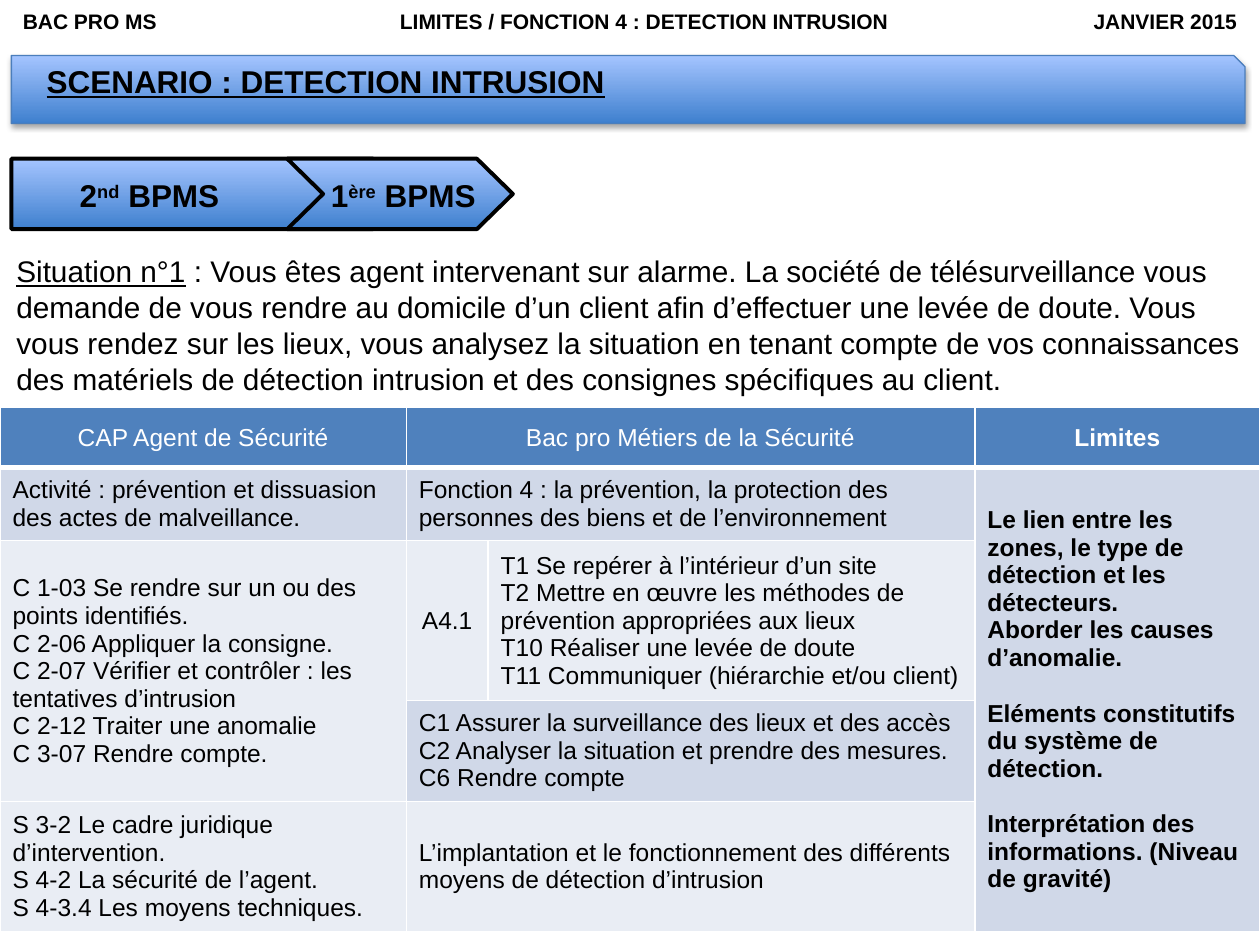
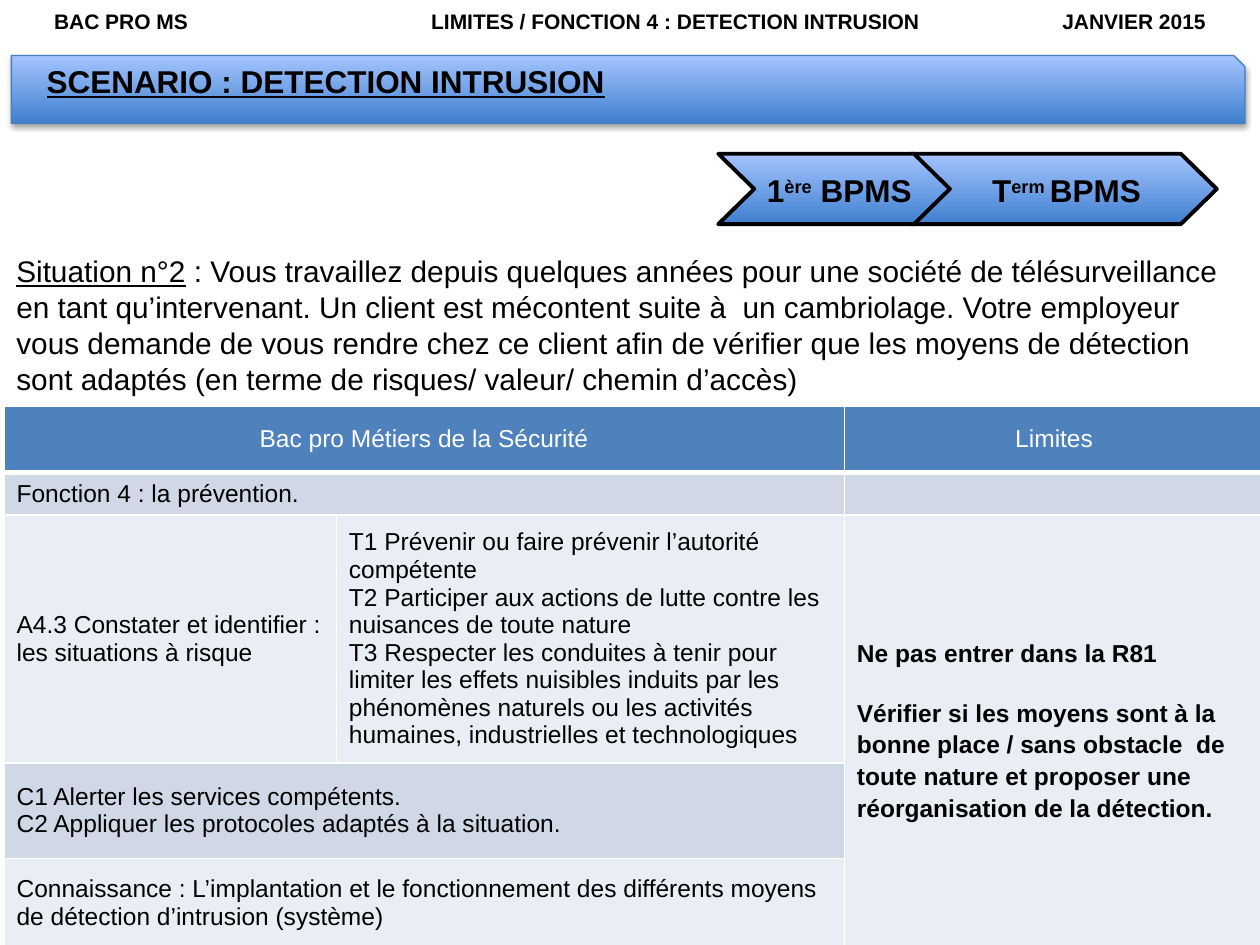
"""Build the two intrusion detection scenario slides."""
from lxml.etree import SubElement
from pptx import Presentation
from pptx.dml.color import RGBColor as RGB
from pptx.enum.shapes import MSO_SHAPE as SHAPE
from pptx.enum.text import MSO_ANCHOR as ANCHOR, PP_ALIGN as ALIGN
from pptx.oxml import parse_xml
from pptx.oxml.ns import nsdecls, qn
from pptx.util import Cm, Pt

COLORS = {
    "text": "000000", "white": "FFFFFF", "accent": "4F81BD", "odd": "D0D8E8",
    "even": "E9EDF4", "deep": "3F80CE", "light": "A4C4FF", "edge": "4B7EBC",
}
HEADER_FMT = {"size": Pt(12), "bold": True}
TITLE_FMT = {"size": Pt(18), "bold": True, "underline": True}
STEP_FMT = {"size": Pt(18), "bold": True}
BODY_FMT = {"size": Pt(17)}
CELL_FMT = {"size": Pt(14), "bold": False}

HEADER = ("BAC PRO MS", "LIMITES / FONCTION 4 : DETECTION INTRUSION", "JANVIER 2015")
TITLE = "SCENARIO : DETECTION INTRUSION"
CHEVRON_ADJ = 0.511

SLIDES = [
    {
        "header_margin": 0.46,
        "steps_top": 3.2,
        "steps": [
            (SHAPE.PENTAGON, 0.23, 8.0, 1.3, 3.43, ("2", "nd", " BPMS")),
            (SHAPE.CHEVRON, 5.79, 4.55, 6.3, 3.66, ("1", "ère", " BPMS")),
        ],
        "situation": (
            "Situation n°1",
            " : Vous êtes agent intervenant sur alarme. La société de télésurveillance vous "
            "demande de vous rendre au domicile d’un client afin d’effectuer une levée de doute. "
            "Vous vous rendez sur les lieux, vous analysez la situation en tenant compte de vos "
            "connaissances des matériels de détection intrusion et des consignes spécifiques au "
            "client."),
        "table": {
            "at": (0, 8.21),
            "cols": (8.19, 1.65, 9.81, 5.75),
            "rows": (1.22, 1.47, 3.2, 2.03, 2.62),
            "merges": [(0, 1, 0, 2), (1, 1, 1, 2), (1, 3, 4, 3), (2, 0, 3, 0),
                       (3, 1, 3, 2), (4, 1, 4, 2)],
            "bold": [(0, 3), (1, 3)],
            "centred": [(2, 1)],
            "block_spacing": 1.0,
            "cells": {
                (0, 0): "CAP Agent de Sécurité",
                (0, 1): "Bac pro Métiers de la Sécurité",
                (0, 3): "Limites",
                (1, 0): "Activité : prévention et dissuasion des actes de malveillance.",
                (1, 1): "Fonction 4 : la prévention, la protection des personnes des biens "
                        "et de l’environnement",
                (1, 3): "Le lien entre les zones, le type de détection et les détecteurs.\n"
                        "Aborder les causes d’anomalie.\n\n"
                        "Eléments constitutifs du système de détection.\n\n"
                        "Interprétation des informations. (Niveau de gravité)",
                (2, 0): "C 1-03 Se rendre sur un ou des points identifiés.\n"
                        "C 2-06 Appliquer la consigne.\n"
                        "C 2-07 Vérifier et contrôler : les tentatives d’intrusion\n"
                        "C 2-12 Traiter une anomalie\n"
                        "C 3-07 Rendre compte.",
                (2, 1): "A4.1",
                (2, 2): "T1 Se repérer à l’intérieur d’un site\n"
                        "T2 Mettre en œuvre les méthodes de prévention appropriées aux lieux\n"
                        "T10 Réaliser une levée de doute\n"
                        "T11 Communiquer (hiérarchie et/ou client)",
                (3, 1): "C1 Assurer la surveillance des lieux et des accès\n"
                        "C2 Analyser la situation et prendre des mesures.\n"
                        "C6 Rendre compte",
                (4, 0): "S 3-2 Le cadre juridique d’intervention.\n"
                        "S 4-2 La sécurité de l’agent.\n"
                        "S 4-3.4 Les moyens techniques.",
                (4, 1): "L’implantation et le fonctionnement des différents moyens de "
                        "détection d’intrusion",
            },
        },
    },
    {
        "header_margin": 1.09,
        "steps_top": 3.1,
        "steps": [
            (SHAPE.CHEVRON, 18.36, 6.17, 18.82, 5.36, ("T", "erm ", "BPMS")),
            (SHAPE.CHEVRON, 14.48, 4.67, 15.09, 3.66, ("1", "ère", " BPMS")),
        ],
        "situation": (
            "Situation n°2",
            " : Vous travaillez depuis quelques années pour une société de télésurveillance en "
            "tant qu’intervenant. Un client est mécontent suite à  un cambriolage. Votre employeur "
            "vous demande de vous rendre chez ce client afin de vérifier que les moyens de "
            "détection sont adaptés (en terme de risques/ valeur/ chemin d’accès)"),
        "table": {
            "at": (0.08, 8.18),
            "cols": (6.7, 10.24, 8.46),
            "rows": (1.35, 0.84, 5.0, 1.93, 1.8),
            "merges": [(0, 0, 0, 1), (1, 0, 1, 1), (2, 2, 4, 2), (3, 0, 3, 1), (4, 0, 4, 1)],
            "bold": [(2, 2)],
            "centred": [],
            "block_spacing": 1.15,
            "cells": {
                (0, 0): "Bac pro Métiers de la Sécurité",
                (0, 2): "Limites",
                (1, 0): "Fonction 4 : la prévention.",
                (2, 0): "A4.3 Constater et identifier : les situations à risque",
                (2, 1): "T1 Prévenir ou faire prévenir l’autorité compétente\n"
                        "T2 Participer aux actions de lutte contre les nuisances de toute nature\n"
                        "T3 Respecter les conduites à tenir pour limiter les effets nuisibles "
                        "induits par les phénomènes naturels ou les activités humaines, "
                        "industrielles et technologiques",
                (2, 2): "Ne pas entrer dans la R81\n\n"
                        "Vérifier si les moyens sont à la bonne place / sans obstacle  de toute "
                        "nature et proposer une réorganisation de la détection.",
                (3, 0): "C1 Alerter les services compétents.\n"
                        "C2 Appliquer les protocoles adaptés à la situation.",
                (4, 0): "Connaissance : L’implantation et le fonctionnement des différents "
                        "moyens de détection d’intrusion (système)",
            },
        },
    },
]


def rgb(name):
    return RGB.from_string(COLORS[name])


def add_run(p, text, fmt, color="text"):
    r = p.add_run()
    r.text = text
    for key, value in {"name": "Arial", **fmt}.items():
        setattr(r.font, key, value)
    r.font.color.rgb = rgb(color)
    return r


def add_text(s, left, top, width, height):
    tf = s.shapes.add_textbox(Cm(left), Cm(top), Cm(width), Cm(height)).text_frame
    tf.word_wrap = True
    return tf


def add_gradient_shape(s, kind, left, top, width, height, line, weight):
    sp = s.shapes.add_shape(kind, Cm(left), Cm(top), Cm(width), Cm(height))
    sp.shadow.inherit = False
    sp.fill.gradient()
    sp.fill.gradient_angle = 90
    for stop, name in zip(sp.fill.gradient_stops, ("deep", "light")):
        stop.color.rgb = rgb(name)
    sp.line.color.rgb = rgb(line)
    sp.line.width = Pt(weight)
    return sp


def add_header(s, margin):
    tf = add_text(s, 0, 0.05, 25.4, 0.76)
    tf.margin_left, tf.margin_right = Cm(margin), 0
    p = tf.paragraphs[0]
    tabs = SubElement(p._p.get_or_add_pPr(), qn("a:tabLst"))
    for pos, align in ((12.53, "ctr"), (25.4 - 2 * margin, "r")):
        SubElement(tabs, qn("a:tab"), pos=str(Cm(pos)), algn=align)
    add_run(p, "\t".join(HEADER), HEADER_FMT)


def add_title(s):
    sp = add_gradient_shape(s, SHAPE.SNIP_1_RECTANGLE, 0.23, 1.12, 24.87, 1.37, "edge", 0.75)
    sp._element.spPr.find(qn("a:effectLst")).append(parse_xml(
        f'<a:outerShdw {nsdecls("a")} blurRad="40000" dist="23000" dir="5400000" rotWithShape="0">'
        f'<a:srgbClr val="{COLORS["text"]}"><a:alpha val="35000"/></a:srgbClr></a:outerShdw>'))
    add_run(add_text(s, 0.69, 1.12, 19.4, 1.02).paragraphs[0], TITLE, TITLE_FMT)


def add_steps(s, top, steps):
    for kind, left, width, *_ in steps:
        sp = add_gradient_shape(s, kind, left, top, width, 1.42, "text", 2.25)
        if kind == SHAPE.CHEVRON:
            sp.adjustments[0] = CHEVRON_ADJ
    for *_, left, width, (start, raised, end) in steps:
        p = add_text(s, left, top + 0.23, width, 1.02).paragraphs[0]
        p.alignment = ALIGN.CENTER
        add_run(p, start, STEP_FMT)
        add_run(p, raised, STEP_FMT)._r.get_or_add_rPr().set("baseline", "30000")
        add_run(p, end, STEP_FMT)


def add_situation(s, label, story):
    p = add_text(s, 0.08, 4.98, 25.4, 3.18).paragraphs[0]
    add_run(p, label, {**BODY_FMT, "underline": True})
    add_run(p, story, BODY_FMT)


def style_cell(cell, row):
    tcPr = cell._tc.get_or_add_tcPr()
    for side in "LRTB":
        thick = (row == 0 and side == "B") or (row == 1 and side == "T")
        ln = SubElement(tcPr, qn(f"a:ln{side}"), w=str(Pt(3 if thick else 1)))
        SubElement(SubElement(ln, qn("a:solidFill")), qn("a:srgbClr"), val=COLORS["white"])
    cell.fill.solid()
    cell.fill.fore_color.rgb = rgb("accent" if row == 0 else "odd" if row % 2 else "even")
    cell.vertical_anchor = ANCHOR.MIDDLE


def fill_cell(cell, text, fmt, color, align, block_spacing):
    p = None
    for b, block in enumerate(text.split("\n\n")):
        for n, line in enumerate(block.split("\n")):
            p = cell.text_frame.add_paragraph() if p else cell.text_frame.paragraphs[0]
            p.alignment = align
            if b:
                p.line_spacing = block_spacing
                p.space_before = Pt(0 if n else 16)
            add_run(p, line, fmt, color)


def add_grid(s, at, cols, rows, merges, bold, centred, block_spacing, cells):
    left, top = at
    table = s.shapes.add_table(len(rows), len(cols), Cm(left), Cm(top),
                               Cm(sum(cols)), Cm(sum(rows))).table
    for col, width in zip(table.columns, cols):
        col.width = Cm(width)
    for row, height in zip(table.rows, rows):
        row.height = Cm(height)
    for r1, c1, r2, c2 in merges:
        table.cell(r1, c1).merge(table.cell(r2, c2))
    for r in range(len(rows)):
        for c in range(len(cols)):
            cell = table.cell(r, c)
            style_cell(cell, r)
            if (r, c) in cells:
                fill_cell(cell, cells[r, c], {**CELL_FMT, "bold": (r, c) in bold},
                          "white" if r == 0 else "text",
                          ALIGN.CENTER if r == 0 or (r, c) in centred else ALIGN.LEFT,
                          block_spacing)
            else:
                SubElement(cell.text_frame.paragraphs[0]._p, qn("a:endParaRPr"), sz="1400")


def main():
    prs = Presentation()
    prs.slide_width, prs.slide_height = Cm(25.4), Cm(19.05)
    for content in SLIDES:
        s = prs.slides.add_slide(prs.slide_layouts[6])
        add_header(s, content["header_margin"])
        add_title(s)
        add_situation(s, *content["situation"])
        add_grid(s, **content["table"])
        add_steps(s, content["steps_top"], content["steps"])
    prs.save("out.pptx")


if __name__ == "__main__":
    main()
